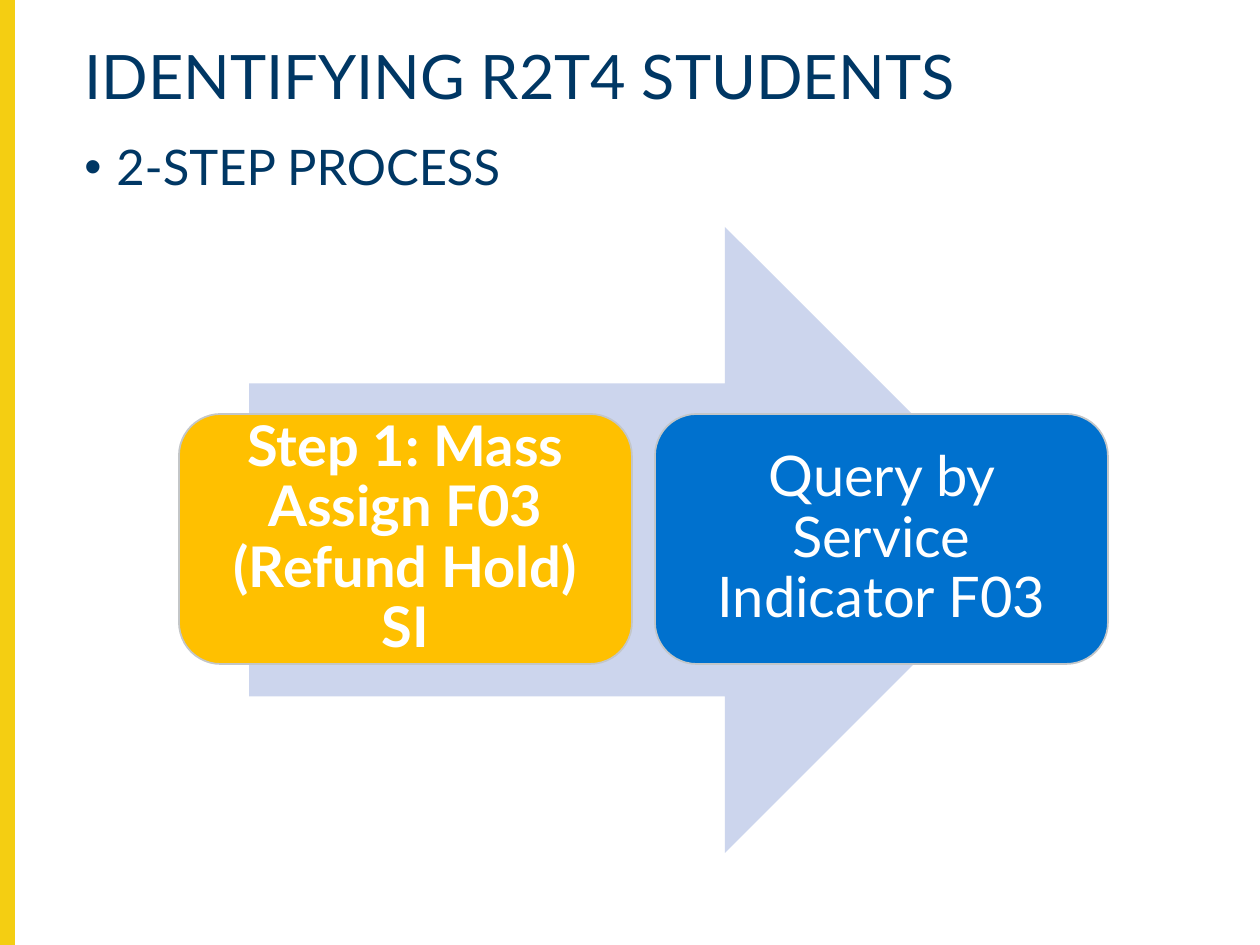
from lxml import etree
from pptx import Presentation
from pptx.dml.color import RGBColor
from pptx.enum.shapes import MSO_SHAPE
from pptx.enum.text import MSO_ANCHOR, PP_ALIGN
from pptx.oxml.ns import qn
from pptx.util import Pt

RECTANGLE = MSO_SHAPE.RECTANGLE
RIGHT_ARROW = MSO_SHAPE.RIGHT_ARROW
ROUNDED_RECTANGLE = MSO_SHAPE.ROUNDED_RECTANGLE
TOP, MIDDLE = MSO_ANCHOR.TOP, MSO_ANCHOR.MIDDLE
LEFT, CENTER = PP_ALIGN.LEFT, PP_ALIGN.CENTER

NAVY = RGBColor(0x00, 0x37, 0x64)
YELLOW = RGBColor(0xF4, 0xCE, 0x12)
PALE_BLUE = RGBColor(0xCC, 0xD5, 0xED)
AMBER = RGBColor(0xFF, 0xC0, 0x00)
BLUE = RGBColor(0x00, 0x71, 0xCE)
GRAY = RGBColor(0xC3, 0xC6, 0xC8)
WHITE = RGBColor(0xFF, 0xFF, 0xFF)
FONT = "Lato"

# Content
TITLE = "IDENTIFYING R2T4 STUDENTS"
BULLET = "2-STEP PROCESS"
STEPS = [
    ("Step 1: Mass Assign F03 (Refund Hold) SI", AMBER, True),
    ("Query by Service Indicator F03", BLUE, False),
]

# Layout in px
SLIDE_WIDTH, SLIDE_HEIGHT = 1260, 945
BAR_WIDTH = 14
TITLE_BOX = (72, 40, 1144, 108)
BODY_BOX = (72, 137, 1149, 721)
ARROW_BOX = (249, 227, 789, 626)
STEP_LEFT, STEP_TOP, STEP_WIDTH, STEP_HEIGHT = 179, 414, 453, 250
STEP_GAP = 23
STEP_INSET = 16
BULLET_INDENT = 32


def px(length):
    return round(length * 914400 / 126)


def add_filled_shape(slide, kind, box, fill, line=None):
    shape = slide.shapes.add_shape(kind, *map(px, box))
    shape.shadow.inherit = False
    shape.fill.solid()
    shape.fill.fore_color.rgb = fill
    if line is None:
        shape.line.fill.background()
    else:
        shape.line.color.rgb = line
        shape.line.width = Pt(1)
    return shape


def write_text(shape, text, size, color, bold=False, align=LEFT, anchor=TOP):
    frame = shape.text_frame
    frame.text = text
    frame.word_wrap = True
    frame.vertical_anchor = anchor
    paragraph = frame.paragraphs[0]
    paragraph.alignment = align
    paragraph.line_spacing = 0.9
    font = paragraph.runs[0].font
    font.name, font.size, font.bold = FONT, Pt(size), bold
    font.color.rgb = color
    return paragraph


def add_bullet(paragraph):
    properties = paragraph._p.get_or_add_pPr()
    properties.set("marL", str(px(BULLET_INDENT)))
    properties.set("indent", str(-px(BULLET_INDENT)))
    etree.SubElement(properties, qn("a:buFont")).set("typeface", "Arial")
    etree.SubElement(properties, qn("a:buChar")).set("char", "•")


presentation = Presentation()
presentation.slide_width = px(SLIDE_WIDTH)
presentation.slide_height = px(SLIDE_HEIGHT)
slide = presentation.slides.add_slide(presentation.slide_layouts[6])

# Side bar
add_filled_shape(slide, RECTANGLE, (0, 0, BAR_WIDTH, SLIDE_HEIGHT), YELLOW, YELLOW)

# Title and bullet
write_text(slide.shapes.add_textbox(*map(px, TITLE_BOX)), TITLE, 35, NAVY)
add_bullet(write_text(slide.shapes.add_textbox(*map(px, BODY_BOX)), BULLET, 28, NAVY))

# Process arrow with its steps
add_filled_shape(slide, RIGHT_ARROW, ARROW_BOX, PALE_BLUE)
for index, (text, fill, bold) in enumerate(STEPS):
    left = STEP_LEFT + index * (STEP_WIDTH + STEP_GAP)
    box = (left, STEP_TOP, STEP_WIDTH, STEP_HEIGHT)
    step = add_filled_shape(slide, ROUNDED_RECTANGLE, box, fill, GRAY)
    write_text(step, text, 32, WHITE, bold, CENTER, MIDDLE)
    frame = step.text_frame
    frame.margin_left = frame.margin_right = px(STEP_INSET)
    frame.margin_top = frame.margin_bottom = px(STEP_INSET)

presentation.save("out.pptx")
